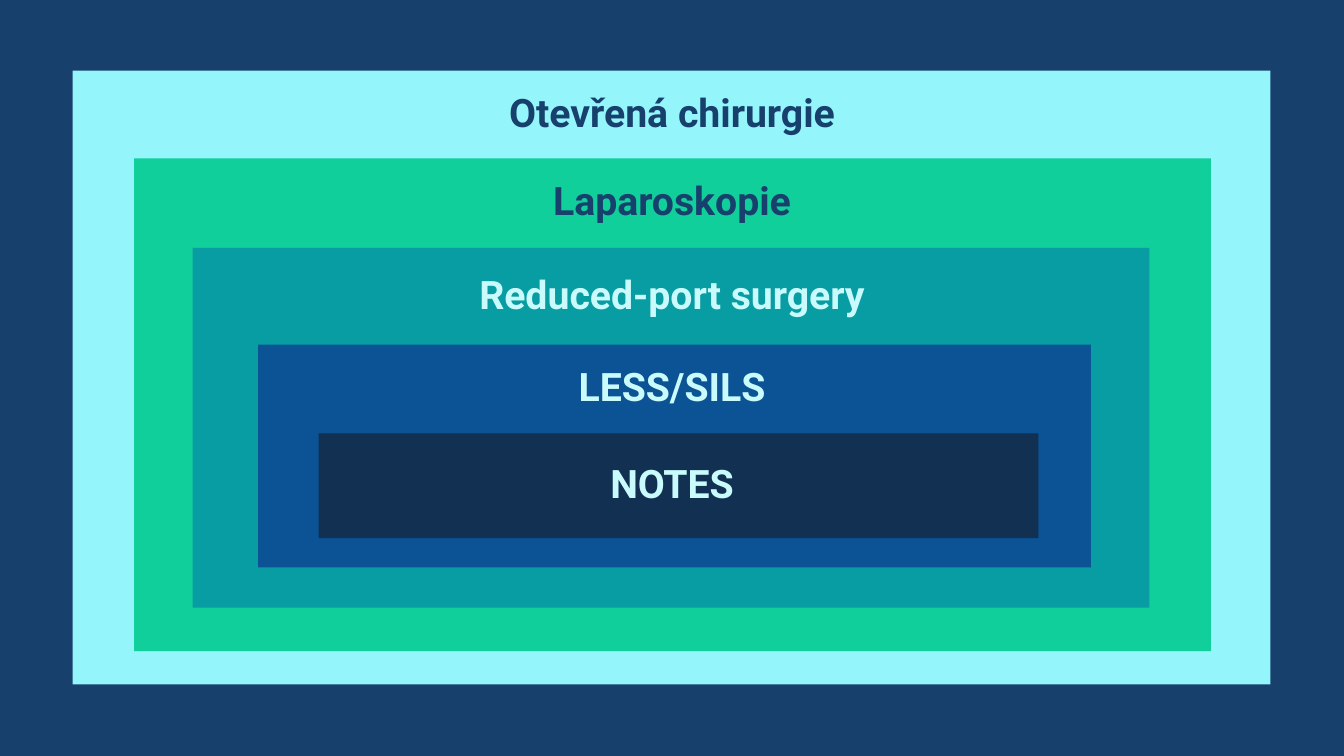
import pptx
import pptx.dml.color
import pptx.enum.shapes
import pptx.enum.text
import pptx.util

Inches = pptx.util.Inches
RGBColor = pptx.dml.color.RGBColor

NAVY = RGBColor(0x17, 0x40, 0x6D)
AQUA = RGBColor(0x94, 0xF5, 0xFA)
GREEN = RGBColor(0x10, 0xCF, 0x9B)
TEAL = RGBColor(0x08, 0x9C, 0xA3)
BLUE = RGBColor(0x0B, 0x53, 0x94)
MIDNIGHT = RGBColor(0x11, 0x30, 0x52)
ICE = RGBColor(0xC9, 0xFA, 0xFC)

SLIDE_W, SLIDE_H = 13.33, 7.5

FRAME_FORMAT = {
    "word_wrap": True,
    "auto_size": pptx.enum.text.MSO_AUTO_SIZE.NONE,
    "vertical_anchor": pptx.enum.text.MSO_ANCHOR.MIDDLE,
}
PARAGRAPH_FORMAT = {
    "alignment": pptx.enum.text.PP_ALIGN.CENTER,
    "line_spacing": 0.9,
    "space_before": pptx.util.Pt(0),
}
FONT_FORMAT = {"name": "Roboto", "size": pptx.util.Pt(28), "bold": True}

# Surgical approaches from outermost to innermost: name, box, fill, text colour
LAYERS = [
    ("Otevřená chirurgie", (0.72, 0.7, 11.88, 6.09), AQUA, NAVY),
    ("Laparoskopie", (1.33, 1.57, 10.68, 4.89), GREEN, NAVY),
    ("Reduced-port surgery", (1.91, 2.46, 9.49, 3.57), TEAL, ICE),
    ("LESS/SILS", (2.56, 3.42, 8.26, 2.21), BLUE, ICE),
    ("NOTES", (3.16, 4.3, 7.14, 1.04), MIDNIGHT, ICE),
]


def apply(target, formats):
    for name, value in formats.items():
        setattr(target, name, value)


def add_layer(slide, box, fill):
    sp = slide.shapes.add_shape(
        pptx.enum.shapes.MSO_SHAPE.RECTANGLE, *map(Inches, box))
    sp.shadow.inherit = False
    sp.fill.solid()
    sp.fill.fore_color.rgb = fill
    sp.line.fill.background()


def format_label(sp, box, text, color):
    apply(sp, dict(zip(("left", "top", "width", "height"), map(Inches, box))))
    tf = sp.text_frame
    apply(tf, FRAME_FORMAT)
    p = tf.paragraphs[0]
    apply(p, PARAGRAPH_FORMAT)
    r = p.add_run()
    r.text = text
    apply(r.font, FONT_FORMAT)
    r.font.color.rgb = color


def add_nested_layers(slide, layers):
    # Each label fills the band down to the top of the next layer
    tops = [box[1] for _, box, _, _ in layers]
    _, inner, _, _ = layers[-1]
    bottoms = tops[1:] + [inner[1] + inner[3]]
    for i, (text, box, fill, color) in enumerate(layers):
        add_layer(slide, box, fill)
        if i == 0:
            # The outermost label is the title, raised above its layer
            label = slide.shapes.title
            slide.shapes._spTree.append(label._element)
        else:
            label = slide.shapes.add_textbox(0, 0, 0, 0)
        band = (0, tops[i], SLIDE_W, bottoms[i] - tops[i])
        format_label(label, band, text, color)


def main():
    prs = pptx.Presentation()
    prs.slide_width, prs.slide_height = Inches(SLIDE_W), Inches(SLIDE_H)
    slide = prs.slides.add_slide(prs.slide_layouts.get_by_name("Title Only"))

    # Background
    slide.background.fill.solid()
    slide.background.fill.fore_color.rgb = NAVY

    # Nested diagram
    add_nested_layers(slide, LAYERS)
    prs.save("out.pptx")


if __name__ == "__main__":
    main()
